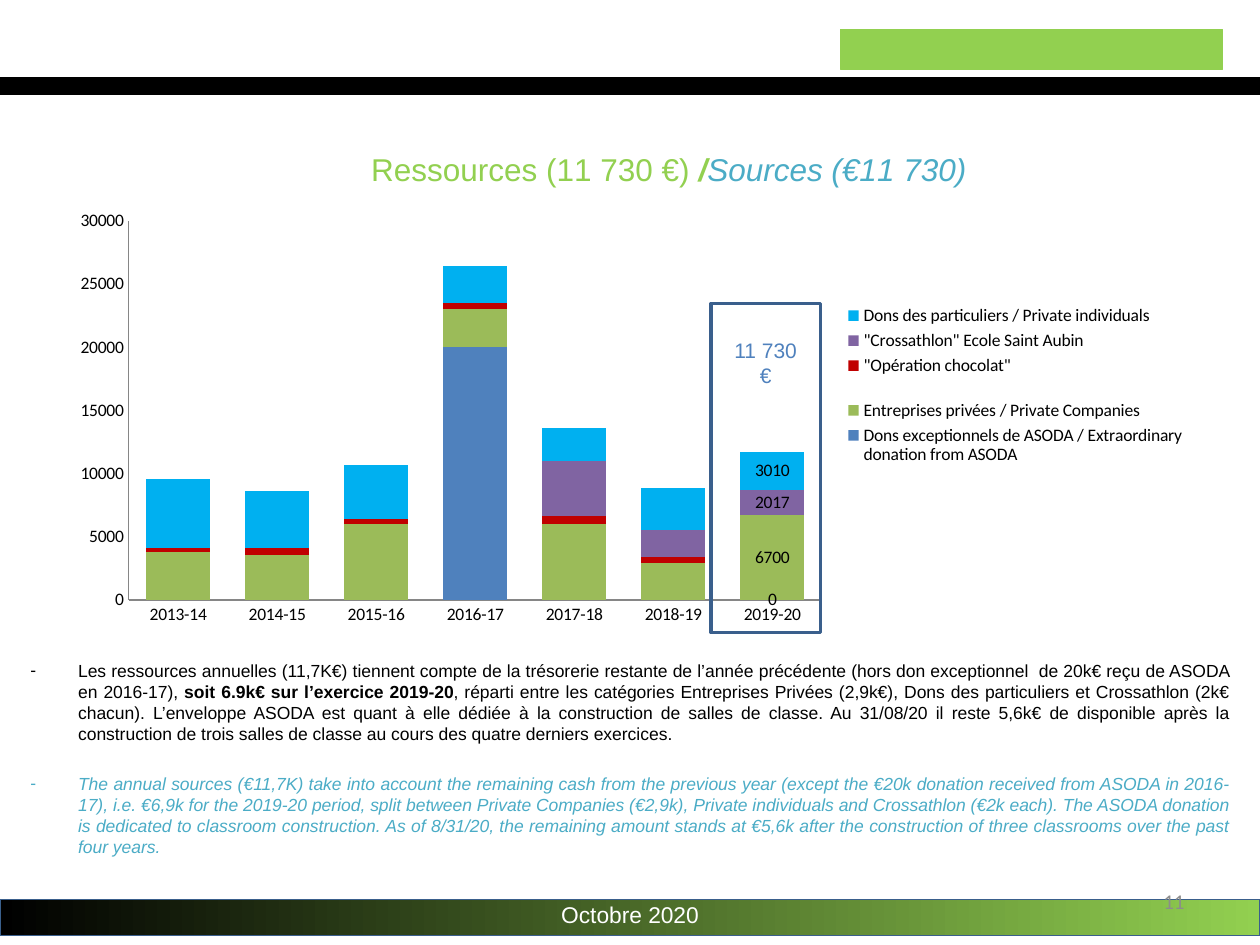
from lxml import etree
from pptx import Presentation
from pptx.chart.data import CategoryChartData
from pptx.dml.color import RGBColor
from pptx.enum import chart as kinds, shapes, text
from pptx.oxml import ns
from pptx.util import Cm, Pt

GREEN, BLUE, TEAL, NAVY = "92D050", "4F81BD", "4BACC6", "3A5F8C"
BLACK, WHITE, GREY = "000000", "FFFFFF", "8C8C8C"

YEARS = ["2013-14", "2014-15", "2015-16", "2016-17", "2017-18", "2018-19", "2019-20"]
# name, colour, values, label on the last year
SERIES = [
    ("Dons exceptionnels de ASODA / Extraordinary donation from ASODA", BLUE,
     [0, 0, 0, 20000, 0, 0, 0], True),
    ("Entreprises privées / Private Companies", "9BBB59",
     [3762, 3519, 6000, 3000, 6000, 2927, 6700], True),
    ('"Opération chocolat"\n', "C00000", [300, 600, 400, 500, 600, 500, 0], False),
    ('"Crossathlon" Ecole Saint Aubin', "8064A2",
     [0, 0, 0, 0, 4376, 2102, 2017], True),
    ("Dons des particuliers / Private individuals", "00B0F0",
     [5522, 4497, 4272, 2904, 2609, 3334, 3010], True),
]
FRENCH = [
    ("Les ressources annuelles (11,7K€) tiennent compte de la trésorerie restante de "
     "l’année précédente (hors don exceptionnel  de 20k€ reçu de ASODA en 2016-17),", False),
    (" soit 6.9k€ sur l’exercice 2019-20", True),
    (", réparti entre les catégories Entreprises Privées (2,9k€), Dons des particuliers et "
     "Crossathlon (2k€ chacun). L’enveloppe ASODA est quant à elle dédiée à la construction "
     "de salles de classe. Au 31/08/20 il reste 5,6k€ de disponible après la construction de "
     "trois salles de classe au cours des quatre derniers exercices.", False),
]
ENGLISH = [
    ("The annual sources (€11,7K) take into account the remaining cash from the previous year "
     "(except the €20k donation received from ASODA in 2016-17), i.e. €6,9k for the 2019-20 "
     "period, split between Private Companies (€2,9k), Private individuals and Crossathlon "
     "(€2k each). The ASODA donation is dedicated to classroom construction. As of 8/31/20, "
     "the remaining amount stands at €5,6k after the construction of three classrooms over "
     "the past four years.", False),
]


def rgb(code):
    return RGBColor.from_string(code)


def style(font, size, color, name="Arial", bold=False, italic=False):
    font.size, font.name = Pt(size), name
    font.bold, font.italic = bold, italic
    font.color.rgb = rgb(color)


def label(slide, box, words, size, color, align, name="Arial"):
    """Add a text box with one paragraph."""
    frame = slide.shapes.add_textbox(*map(Cm, box)).text_frame
    frame.word_wrap = True
    par = frame.paragraphs[0]
    par.text, par.alignment = words, align
    style(par.font, size, color, name)


def rect(slide, box, width, color=NAVY):
    shape = slide.shapes.add_shape(shapes.MSO_SHAPE.RECTANGLE, *map(Cm, box))
    shape.shadow.inherit = False
    shape.line.color.rgb = rgb(color)
    shape.line.width = Pt(width)
    return shape


def header(slide, box):
    x, y, w, h = box
    # Plain block at the right
    block = rect(slide, (x + 16.95, y + 0.6, 7.7, 0.8), 0, GREEN)
    block.fill.solid()
    block.fill.fore_color.rgb = rgb(GREEN)
    # Black rule
    rule = slide.shapes.add_connector(shapes.MSO_CONNECTOR.STRAIGHT,
                                      Cm(x), Cm(y + h), Cm(x + w), Cm(y + h))
    rule.line.color.rgb = rgb(BLACK)
    rule.line.width = Pt(10)
    etree.SubElement(rule._element.spPr, ns.qn("a:effectLst"))


def footer(slide, box):
    x, y, w, h = box
    band = rect(slide, box, 0)
    band.fill.gradient()
    band.fill.gradient_angle = 0
    for stop, color in zip(band.fill.gradient_stops, (BLACK, GREEN)):
        stop.color.rgb = rgb(color)
    label(slide, (x, y - 0.1, w, 0.81), "Octobre 2020", 13, WHITE, text.PP_ALIGN.CENTER)
    label(slide, (x + 18.21, y - 0.35, 5.92, 0.7), "11", 12, GREY,
          text.PP_ALIGN.RIGHT, "Calibri")


def notes(body, box):
    """Fill the body placeholder with the dashed paragraphs."""
    body.left, body.top, body.width, body.height = map(Cm, box)
    frame = body.text_frame
    frame.auto_size = text.MSO_AUTO_SIZE.NONE
    pars = [frame.paragraphs[0], frame.add_paragraph()]
    looks = [(FRENCH, BLACK, False, 0), (ENGLISH, TEAL, True, 16.5)]
    for par, (parts, color, italic, gap) in zip(pars, looks):
        par.alignment = text.PP_ALIGN.JUSTIFY
        par.space_before = Pt(gap)
        style(par.font, 10, color, italic=italic)
        for words, bold in parts:
            run = par.add_run()
            run.text = words
            run.font.bold = bold
        props = par._p.get_or_add_pPr()
        props.set("marL", str(Cm(0.96)))
        props.set("indent", str(Cm(-0.96)))
        dash = etree.Element(ns.qn("a:buChar"), char="-")
        props.find(ns.qn("a:defRPr")).addprevious(dash)


def place(node, index, **spots):
    """Give a chart part a fixed layout, in fractions of the chart."""
    for old in node.findall(ns.qn("c:layout")):
        node.remove(old)
    layout = etree.Element(ns.qn("c:layout"))
    manual = etree.SubElement(layout, ns.qn("c:manualLayout"))
    for key, value in spots.items():
        etree.SubElement(manual, ns.qn("c:" + key), val=str(value))
    node.insert(index, layout)


def graph(slide, box):
    data = CategoryChartData()
    data.categories = YEARS
    for name, _, values, _ in SERIES:
        data.add_series(name, values)
    chart = slide.shapes.add_chart(kinds.XL_CHART_TYPE.COLUMN_STACKED,
                                   *map(Cm, box), data).chart
    style(chart.font, 10, BLACK, "Calibri")
    # Title in two languages
    par = chart.chart_title.text_frame.paragraphs[0]
    for words, color, bold, italic in (("Ressources (11 730 €) ", GREEN, False, False),
                                       ("/", GREEN, True, True),
                                       ("Sources (€11 730)", TEAL, False, True)):
        run = par.add_run()
        run.text = words
        style(run.font, 18, color, bold=bold, italic=italic)
    place(chart.chart_title._element, 1, xMode="edge", yMode="edge", x=0.27, y=0.02)
    # Legend
    chart.has_legend = True
    chart.legend.position = kinds.XL_LEGEND_POSITION.RIGHT
    chart.legend.include_in_layout = False
    place(chart.legend._element, 1, xMode="edge", yMode="edge",
          x=0.69, y=0.33, w=0.3, h=0.34)
    # Axes
    chart.value_axis.maximum_scale = 30000
    chart.value_axis.minimum_scale = 0
    chart.value_axis.major_unit = 5000
    chart.value_axis.has_major_gridlines = False
    for axis in (chart.value_axis, chart.category_axis):
        axis.major_tick_mark = kinds.XL_TICK_MARK.NONE
        axis.format.line.color.rgb = rgb("868686")
    # Columns
    plot = chart.plots[0]
    plot.gap_width, plot.overlap = 55, 100
    plot.vary_by_categories = False
    place(chart._chartSpace.chart.plotArea, 0, layoutTarget="inner", xMode="edge",
          yMode="edge", x=0.06, y=0.17, w=0.61, h=0.76)
    for series, (_, color, _, shown) in zip(plot.series, SERIES):
        series.format.fill.solid()
        series.format.fill.fore_color.rgb = rgb(color)
        if shown:
            series.data_labels.show_value = False
            last = series.points[len(YEARS) - 1].data_label
            last.position = kinds.XL_LABEL_POSITION.CENTER


def focus(slide, box):
    """Frame the latest year and state its total."""
    x, y, w, _ = box
    rect(slide, box, 2).fill.background()
    label(slide, (x + 0.1, y + 0.56, w - 0.2, 0.76), "11 730 €", 12, BLUE,
          text.PP_ALIGN.CENTER)


def main():
    deck = Presentation()
    deck.slide_width, deck.slide_height = Cm(25.4), Cm(19.05)
    slide = deck.slides.add_slide(deck.slide_layouts[1])
    title = slide.shapes.title._element
    title.getparent().remove(title)
    footer(slide, (0, 18.14, 25.4, 0.72))
    header(slide, (0, 0, 25.4, 1.73))
    notes(slide.placeholders[1], (0.36, 13.18, 24.66, 4.83))
    graph(slide, (1.22, 2.74, 22.91, 10.06))
    focus(slide, (14.33, 6.12, 2.21, 6.63))
    deck.save("out.pptx")


if __name__ == "__main__":
    main()
